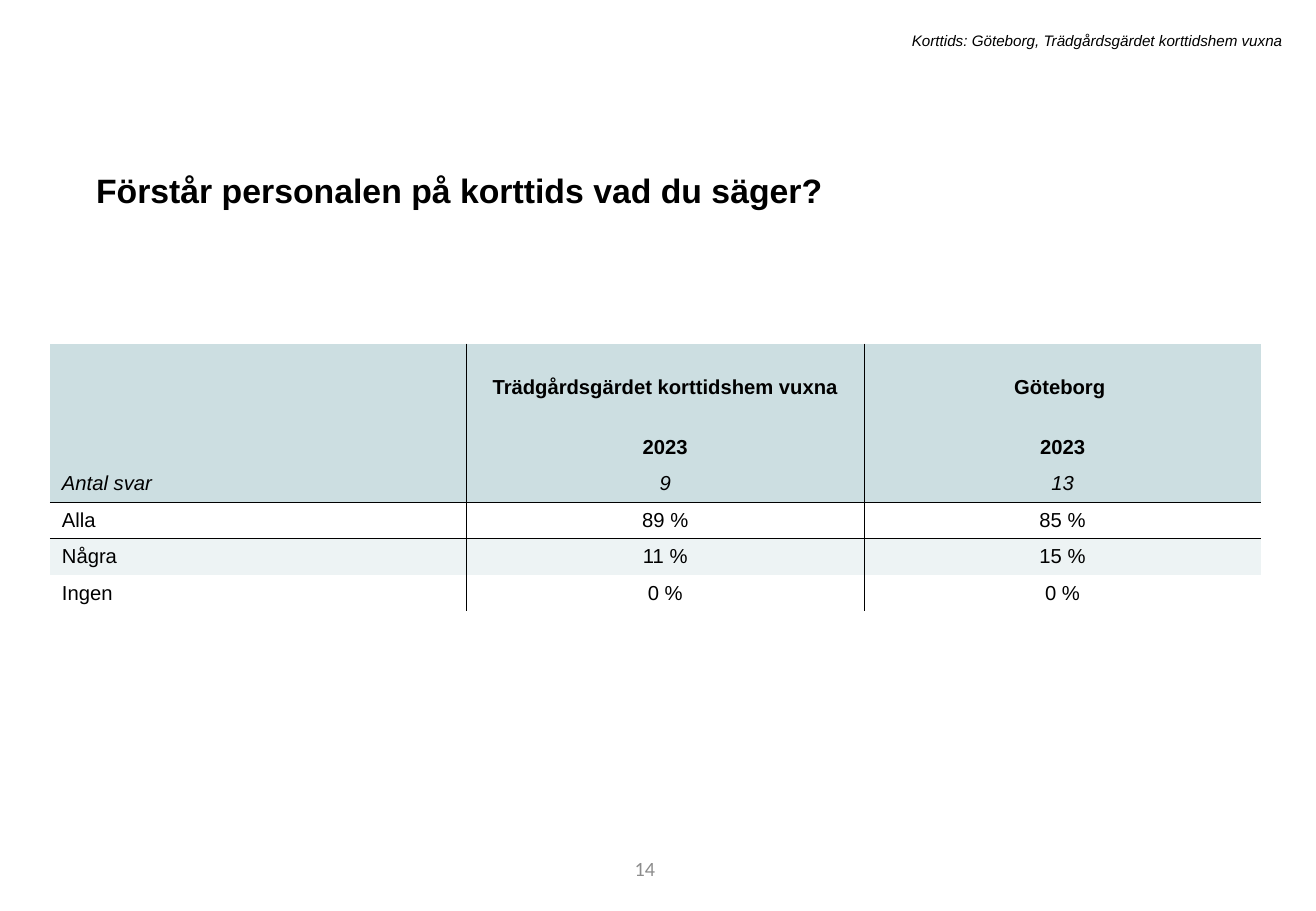
from lxml import etree
from pptx import Presentation
from pptx import util as u
from pptx.dml.color import RGBColor
from pptx.enum import text
from pptx.oxml import ns

QUESTION = "Förstår personalen på korttids vad du säger?"
UNIT = "Korttids: Göteborg, Trädgårdsgärdet korttidshem vuxna"
PAGE = "14"
ANSWERS = [
    ("", "Trädgårdsgärdet korttidshem vuxna", "Göteborg "),
    ("", "2023", "2023"),
    ("Antal svar", "9", "13"),
    ("Alla", "89 %", "85 %"),
    ("Några", "11 %", "15 %"),
    ("Ingen", "0 %", "0 %"),
]
HEADING_ROWS = 2
COUNT_ROW = 2
COLUMN_WIDTHS = (3.43, 3.27, 3.27)
HEADING_HEIGHT, ROW_HEIGHT = 0.5, 0.3

BLACK = RGBColor(0x00, 0x00, 0x00)
GREY = RGBColor(0x8C, 0x8C, 0x8C)
HEADER_TINT = RGBColor(0xCC, 0xDE, 0xE1)
BAND_TINT = RGBColor(0xED, 0xF3, 0xF4)
PLAIN_TABLE_STYLE = "{2D5ABB26-0587-4C30-8999-92F81FD0307C}"


def format_text(frame, size, color=BLACK, font="Arial", bold=False, italic=False,
                align=text.PP_ALIGN.LEFT):
    for paragraph in frame.paragraphs:
        paragraph.alignment = align
        for run in paragraph.runs:
            run.font.size = u.Pt(size)
            run.font.name = font
            run.font.bold = bold
            run.font.italic = italic
            run.font.color.rgb = color


def add_label(slide, words, box, anchor, **style):
    frame = slide.shapes.add_textbox(*map(u.Inches, box)).text_frame
    frame.word_wrap = True
    frame.vertical_anchor = anchor
    frame.text = words
    format_text(frame, align=text.PP_ALIGN.RIGHT, **style)


def add_border(cell, side):
    """Draw a thin black line on side L, R, T or B of the cell."""
    line = etree.SubElement(cell._tc.get_or_add_tcPr(), ns.qn(f"a:ln{side}"), w=str(u.Pt(0.25)))
    fill = etree.SubElement(line, ns.qn("a:solidFill"))
    etree.SubElement(fill, ns.qn("a:srgbClr"), val=str(BLACK))


def fill_cell(cell, row, column):
    heading = row < HEADING_ROWS
    cell.text = ANSWERS[row][column]
    cell.vertical_anchor = text.MSO_ANCHOR.BOTTOM if heading else text.MSO_ANCHOR.MIDDLE
    format_text(cell.text_frame, 12, bold=heading, italic=row == COUNT_ROW,
                align=text.PP_ALIGN.CENTER if column else text.PP_ALIGN.LEFT)
    borders = (
        ("L", column > 0),
        ("R", column < len(COLUMN_WIDTHS) - 1),
        ("T", row == COUNT_ROW + 1),
        ("B", row == COUNT_ROW),
    )
    for side, drawn in borders:
        if drawn:
            add_border(cell, side)
    if row <= COUNT_ROW or (row - COUNT_ROW) % 2 == 0:
        cell.fill.solid()
        cell.fill.fore_color.rgb = HEADER_TINT if row <= COUNT_ROW else BAND_TINT
    else:
        cell.fill.background()


def add_answers(slide):
    heights = [HEADING_HEIGHT if row < HEADING_ROWS else ROW_HEIGHT
               for row in range(len(ANSWERS))]
    box = (0.41, 2.83, sum(COLUMN_WIDTHS), sum(heights))
    table = slide.shapes.add_table(len(ANSWERS), len(COLUMN_WIDTHS),
                                   *map(u.Inches, box)).table
    table.first_row = table.horz_banding = False
    table._tbl.tblPr.find(ns.qn("a:tableStyleId")).text = PLAIN_TABLE_STYLE
    for column, width in zip(table.columns, COLUMN_WIDTHS):
        column.width = u.Inches(width)
    for row, height in enumerate(heights):
        table.rows[row].height = u.Inches(height)
        for column in range(len(COLUMN_WIDTHS)):
            fill_cell(table.cell(row, column), row, column)


def add_question(slide):
    title = slide.shapes.title
    title.left, title.top, title.width, title.height = map(u.Inches, (0.69, 1.28, 9.4, 0.47))
    frame = title.text_frame
    frame.text = QUESTION
    frame.word_wrap = True
    frame.auto_size = text.MSO_AUTO_SIZE.SHAPE_TO_FIT_TEXT
    frame.vertical_anchor = text.MSO_ANCHOR.TOP
    frame.paragraphs[0].line_spacing = 1.2
    frame.paragraphs[0].space_before = u.Pt(10)
    format_text(frame, 20, bold=True)


def main():
    deck = Presentation()
    deck.slide_width, deck.slide_height = u.Inches(10.83), u.Inches(7.5)
    slide = deck.slides.add_slide(deck.slide_layouts.get_by_name("Title Only"))
    add_question(slide)
    add_label(slide, UNIT, (1.79, 0.21, 8.86, 0.25), text.MSO_ANCHOR.TOP, size=9, italic=True)
    add_answers(slide)
    add_label(slide, PAGE, (3.05, 6.95, 2.44, 0.4), text.MSO_ANCHOR.MIDDLE,
              size=12, color=GREY, font="Calibri")
    deck.save("out.pptx")


if __name__ == "__main__":
    main()
